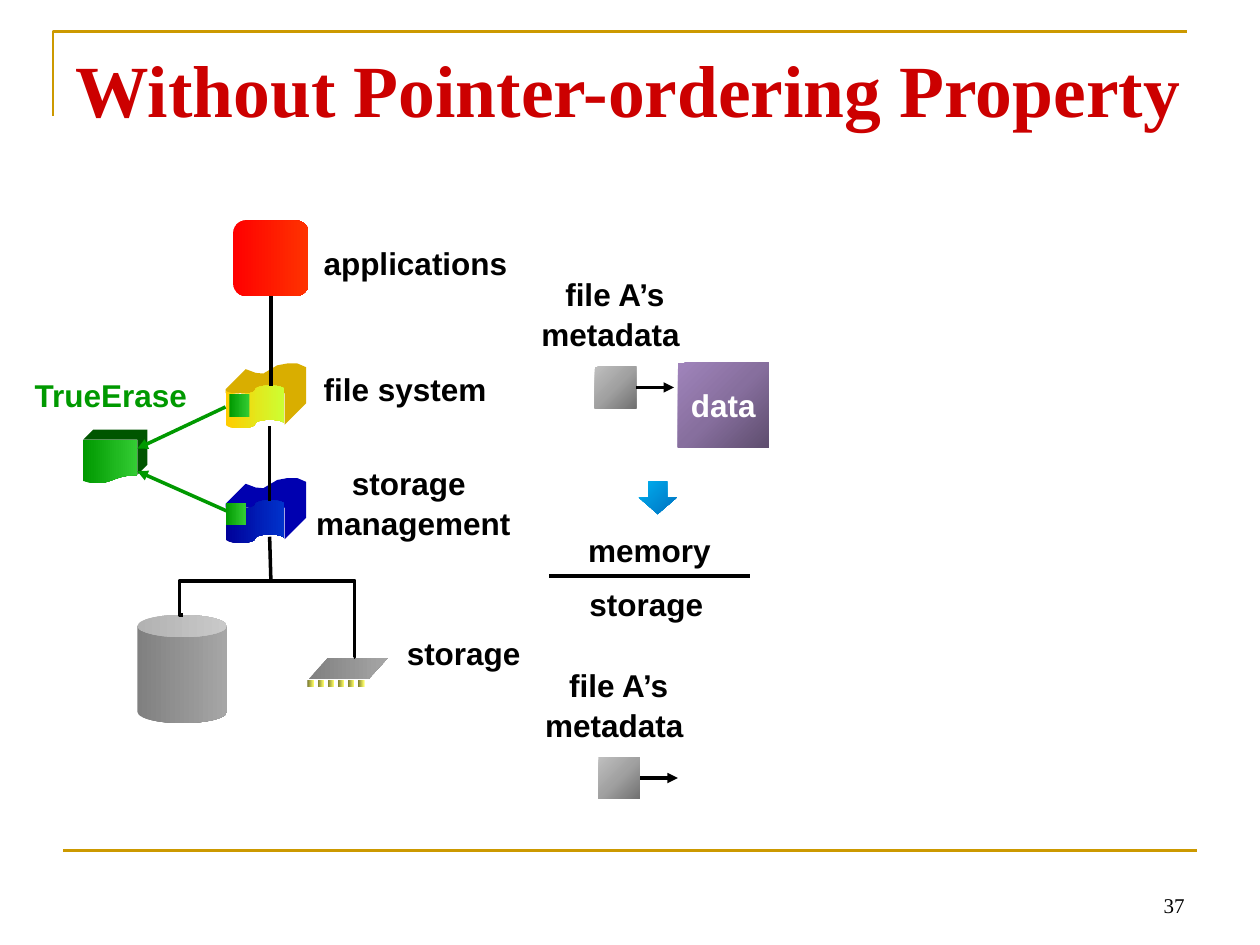
import copy
import dataclasses
import pptx
import pptx.dml.color
import pptx.enum.shapes
import pptx.enum.text
import pptx.oxml
import pptx.oxml.ns
import pptx.util

KIND = pptx.enum.shapes.MSO_SHAPE
LINK = pptx.enum.shapes.MSO_CONNECTOR
ALIGN = pptx.enum.text.PP_ALIGN
ANCHOR = pptx.enum.text.MSO_ANCHOR
FIT = pptx.enum.text.MSO_AUTO_SIZE
qn = pptx.oxml.ns.qn


@dataclasses.dataclass(frozen=True)
class Theme:
    black: str = "000000"
    white: str = "FFFFFF"
    gold: str = "CC9900"
    head: str = "CC0000"
    leaf: str = "009900"
    fern: str = "005500"
    amber: str = "D9AE00"
    navy: str = "0000B0"
    red: tuple = ("FF0000", "FF3300")
    grey: tuple = ("808080", "A6A6A6")
    pin: tuple = ("76762F", "FFFF66")
    blue: tuple = ("000099", "0033CC")
    lemon: tuple = ("FFCC00", "CCFF33")
    green: tuple = ("009900", "33CC33")
    steel: tuple = ("717171", "A1A1A1", "BFBFBF")
    plum: tuple = ("5F4E6F", "876F9E", "A084BB")
    sky: tuple = ("0070C0", "00B0F0")
    sans: str = "Arial"
    serif: str = "Times New Roman"
    big: int = 42
    mid: int = 18
    small: int = 12
    thin: float = 1.5
    line: float = 2
    thick: float = 2.25


def rgb(code):
    return pptx.dml.color.RGBColor.from_string(code)


def put(item, form):
    for name, value in form.items():
        setattr(item, name, value)


class Deck:
    """Draws themed elements on a slide with a grid of 100 columns and 75 rows."""

    def __init__(self, theme):
        self.theme = theme
        self.show = pptx.Presentation()
        put(self.show, {"slide_width": pptx.util.Inches(10),
                        "slide_height": pptx.util.Inches(7.5)})
        self.cell = self.show.slide_width // 100
        self.slide = self.show.slides.add_slide(self.show.slide_layouts[5])
        self.shapes = self.slide.shapes

    def span(self, *grid):
        return [round(unit * self.cell) for unit in grid]

    def words(self, frame, text, form, face, size, color, space=None):
        put(frame, form["frame"])
        frame.text = text
        for para in frame.paragraphs:
            put(para, {"alignment": form["align"], "line_spacing": space})
            put(para.font, {"name": face, "size": pptx.util.Pt(size), "bold": form["bold"]})
            para.font.color.rgb = rgb(color)

    def title(self, text, *grid):
        item = self.shapes.title
        put(item, dict(zip(("left", "top", "width", "height"), self.span(*grid))))
        form = {"frame": {"vertical_anchor": ANCHOR.TOP, "auto_size": FIT.NONE},
                "align": ALIGN.LEFT, "bold": True}
        self.words(item.text_frame, text, form, self.theme.serif, self.theme.big, self.theme.head)

    def number(self, text, *grid):
        form = {"frame": {"vertical_anchor": ANCHOR.BOTTOM, "word_wrap": True},
                "align": ALIGN.RIGHT, "bold": False}
        frame = self.shapes.add_textbox(*self.span(*grid)).text_frame
        self.words(frame, text, form, self.theme.serif, self.theme.small, self.theme.black)

    def label(self, text, *grid, align=ALIGN.LEFT, color=None):
        form = {"frame": {"word_wrap": False, "auto_size": FIT.SHAPE_TO_FIT_TEXT},
                "align": align, "bold": True}
        frame = self.shapes.add_textbox(*self.span(*grid)).text_frame
        self.words(frame, text, form, self.theme.sans, self.theme.mid,
                   color or self.theme.black, 1.05)

    def shape(self, kind, tones, *grid, text="", glow=False, turn=0, bend=None):
        item = self.shapes.add_shape(kind, *self.span(*grid))
        item.shadow.inherit = False
        item.rotation = turn
        item.line.fill.background()
        if bend is not None:
            item.adjustments[0] = bend
        item.fill.gradient()
        item.fill.gradient_angle = 0
        stops = item.fill.gradient_stops
        stops[0].color.rgb, stops[1].color.rgb = rgb(tones[0]), rgb(tones[-1])
        grad = item._element.spPr.find(qn("a:gradFill"))
        if len(tones) == 3:
            first = grad.find(qn("a:gsLst"))[0]
            half = copy.deepcopy(first)
            half.set("pos", "50000")
            half[0].set("val", tones[1])
            first.addnext(half)
        if glow:
            lin = grad.find(qn("a:lin"))
            way = pptx.oxml.parse_xml(
                f'<a:path {pptx.oxml.ns.nsdecls("a")} path="circle">'
                '<a:fillToRect l="100000" t="100000"/></a:path>')
            grad.replace(lin, way)
        if text:
            form = {"frame": {"word_wrap": False}, "align": ALIGN.CENTER, "bold": True}
            self.words(item.text_frame, text, form, self.theme.sans, self.theme.mid,
                       self.theme.white)
        return item

    def free(self, points, left=0, top=0, fill=None, line=None):
        dots = [self.span(left + x, top + y) for x, y in points]
        pen = self.shapes.build_freeform(*dots[0], scale=1.0)
        pen.add_line_segments(dots[1:], close=bool(fill))
        item = pen.convert_to_shape()
        item.shadow.inherit = False
        if fill:
            item.fill.solid()
            item.fill.fore_color.rgb = rgb(fill)
            item.line.fill.background()
        else:
            item.fill.background()
            item.line.color.rgb = rgb(line)
            item.line.width = pptx.util.Pt(self.theme.thin)

    def line(self, *grid, color=None, width=None, head=False, bend=None, join=None):
        kind = LINK.STRAIGHT if bend is None else LINK.ELBOW
        item = self.shapes.add_connector(kind, *self.span(*grid))
        if join:
            item.begin_connect(*join)
        item.line.color.rgb = rgb(color or self.theme.black)
        item.line.width = pptx.util.Pt(width or self.theme.line)
        prop = item._element.spPr
        if head:
            edge = prop.find(qn("a:ln"))
            edge.append(edge.makeelement(qn("a:tailEnd"), {"type": "triangle"}))
        if bend is not None:
            guide = prop.makeelement(qn("a:gd"), {"name": "adj1", "fmla": f"val {bend}"})
            prop.find(qn("a:prstGeom")).find(qn("a:avLst")).append(guide)
        prop.append(prop.makeelement(qn("a:effectLst"), {}))

    def file(self, left, top):
        self.label("file A’s\nmetadata ", left - 5.3, top - 7.9, 13.8, 7.1, align=ALIGN.CENTER)
        node = self.shape(KIND.RECTANGLE, self.theme.steel, left, top, 3.3, 3.3, glow=True)
        mid = top + 1.65
        self.line(left + 3.3, mid, left + 6.3, mid, head=True, join=(node, 3))

    def tape(self, top, tones, side):
        rim = [(0, 0.6), (0, 0.3), (1.6, -1.3), (2.4, -1), (3, -0.95), (4.1, -1.6),
               (4.9, -1.75), (5.7, -1.75), (6.4, -1.45), (6.4, 1.4), (4.7, 3.1), (4.7, 0.6)]
        self.free(rim, 17.9, top, fill=side)
        self.shape(KIND.FLOWCHART_PUNCHED_TAPE if hasattr(KIND, "FLOWCHART_PUNCHED_TAPE")
                   else KIND.WAVE, tones, 17.9, top, 4.7, 3.4)


def main():
    look = Theme()
    deck = Deck(look)
    deck.free([(4.2, 9.2), (4.2, 2.5), (94.2, 2.5)], line=look.gold)
    deck.line(5, 67.5, 95, 67.5, color=look.gold, width=look.thin)
    deck.title("Without Pointer-ordering Property", 5, 3, 90, 15)
    deck.number("37", 71.7, 68.3, 23.3, 5)

    deck.shape(KIND.RECTANGLE, look.plum, 53.8, 28.8, 7.2, 6.7, text="data", glow=True)
    for left, top in [(47.2, 29.1), (47.5, 60.1)]:
        deck.file(left, top)
    deck.shape(KIND.RIGHT_ARROW, look.sky, 50.9, 38, 2.6, 3, glow=True, turn=90)

    app = deck.shape(KIND.ROUNDED_RECTANGLE, look.red, 18.5, 17.5, 6, 6)
    deck.shape(KIND.CAN, look.grey, 10.9, 48.8, 7.1, 8.6)
    deck.shape(KIND.PARALLELOGRAM, look.grey, 24.5, 52.2, 6.3, 1.7, bend=0.91)
    for step in range(6):
        deck.shape(KIND.RECTANGLE, look.pin, 24.4 + 0.8 * step, 54, 0.5, 0.5)
    deck.tape(39.7, look.blue, look.navy)
    deck.tape(30.6, look.lemon, look.amber)

    for text, left, top, wide in [("applications", 24.7, 18.7, 21),
                                  ("file system", 24.7, 28.7, 18.9),
                                  ("storage", 31.3, 49.7, 14.9)]:
        deck.label(text, left, top, wide, 5.1)
    deck.label("storage \nmanagement", 24, 36.2, 17.6, 7.1, align=ALIGN.CENTER)

    deck.line(21.5, 23.5, 21.5, 30.6, join=(app, 2))
    deck.line(21.4, 33.8, 21.4, 39.8)
    deck.line(21.4, 42.6, 21.5, 46.1)
    deck.line(21.5, 46.1, 28.1, 52.2, bend=100900)
    deck.line(21.5, 46.1, 14.5, 48.8, bend=103500)

    deck.free([(0, 0), (0.8, -0.8), (5.1, -0.8), (5.1, 2), (4.3, 2.8), (4.3, 0)],
              6.6, 34.9, fill=look.fern)
    deck.shape(KIND.FLOWCHART_DOCUMENT, look.green, 6.6, 34.9, 4.3, 3.5)
    deck.line(17.9, 32.3, 10.9, 35.6, color=look.leaf, head=True)
    deck.line(18.1, 40.6, 10.9, 37.4, color=look.leaf, head=True)
    deck.label("TrueErase", 1.7, 29.2, 14.2, 4, align=ALIGN.CENTER, color=look.leaf)
    for left, top in [(17.9, 39.9), (18.2, 31.3)]:
        deck.shape(KIND.RECTANGLE, look.green, left, top, 1.6, 1.8)

    deck.line(43.6, 45.7, 59.5, 45.7, width=look.thick)
    deck.label("memory", 45.7, 41.5, 11.8, 4)
    deck.label("storage", 45.8, 45.8, 11.1, 4)
    deck.show.save("out.pptx")


if __name__ == "__main__":
    main()
